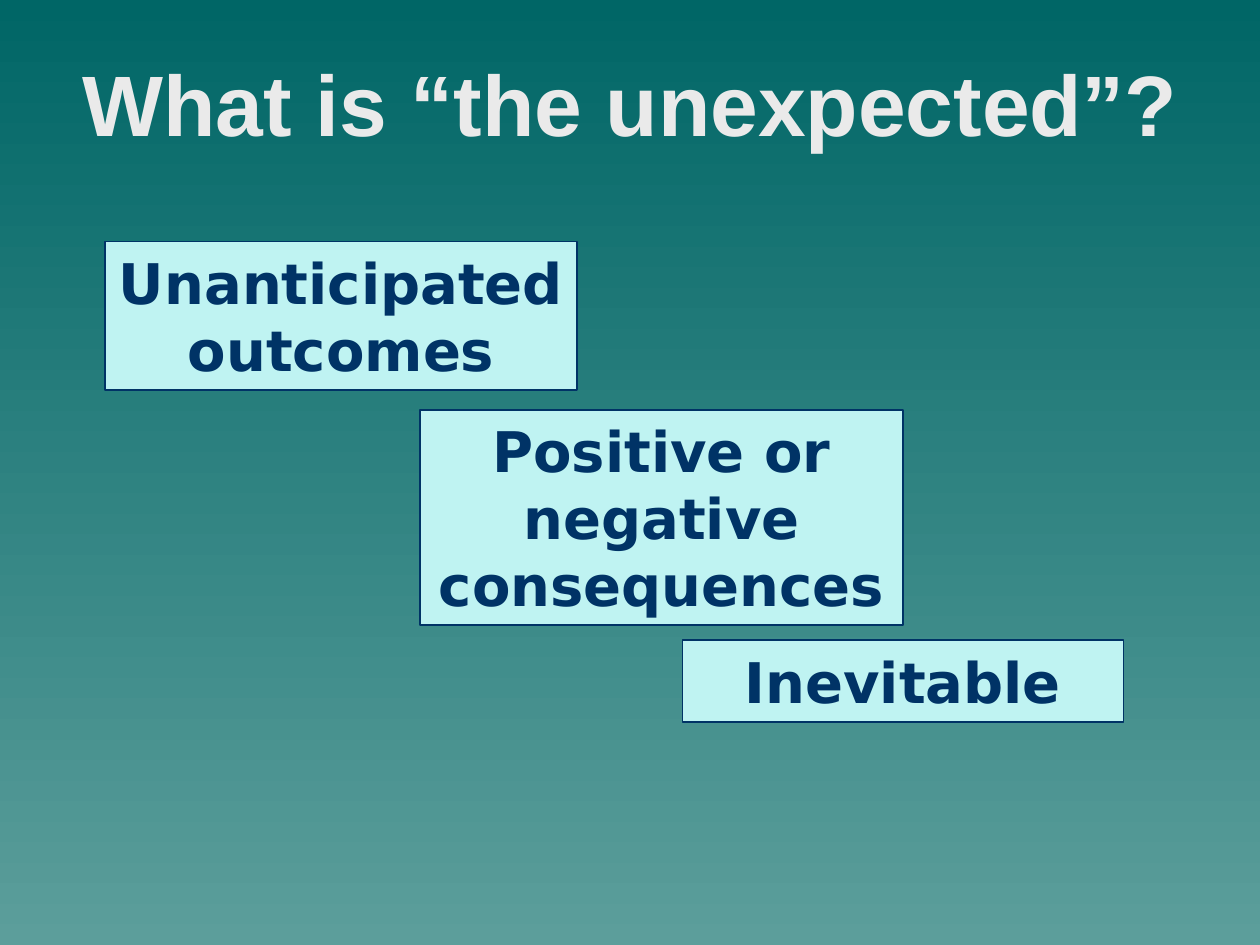
from pptx import Presentation
from pptx.dml.color import RGBColor
from pptx.enum.shapes import MSO_SHAPE
from pptx.enum.text import MSO_ANCHOR, MSO_AUTO_SIZE, PP_ALIGN
from pptx.util import Cm, Pt

TITLE = "What is “the unexpected”?"
BOXES = [
    ("Unanticipated outcomes", 2.12, 4.87, 9.52, 3),
    ("Positive or negative consequences", 8.47, 8.26, 9.74, 4.34),
    ("Inevitable", 13.76, 12.91, 8.89, 1.64),
]
COLORS = {
    "top": "006666",
    "bottom": "5C9E9B",
    "title": "EAEAEA",
    "box": "BFF3F2",
    "ink": "003366",
}


def color(name):
    return RGBColor.from_string(COLORS[name])


def write(shape, text, font_name, size, color_name):
    frame = shape.text_frame
    frame.word_wrap = True
    frame.vertical_anchor = MSO_ANCHOR.MIDDLE
    paragraph = frame.paragraphs[0]
    paragraph.alignment = PP_ALIGN.CENTER
    run = paragraph.add_run()
    run.text = text
    run.font.name = font_name
    run.font.size = Pt(size)
    run.font.bold = True
    run.font.color.rgb = color(color_name)


def add_box(slide, text, left, top, width, height):
    shape = slide.shapes.add_shape(
        MSO_SHAPE.RECTANGLE, Cm(left), Cm(top), Cm(width), Cm(height))
    shape.shadow.inherit = False
    shape.fill.solid()
    shape.fill.fore_color.rgb = color("box")
    shape.line.color.rgb = color("ink")
    shape.line.width = Pt(1)
    write(shape, text, "DejaVu Sans", 32, "ink")
    shape.text_frame.auto_size = MSO_AUTO_SIZE.SHAPE_TO_FIT_TEXT


def main():
    presentation = Presentation()
    presentation.slide_width, presentation.slide_height = Cm(25.4), Cm(19.05)
    slide = presentation.slides.add_slide(presentation.slide_layouts[5])

    fill = slide.background.fill
    fill.gradient()
    fill.gradient_angle = 270
    for stop, name, position in zip(fill.gradient_stops, ("top", "bottom"), (0, 1)):
        stop.color.rgb = color(name)
        stop.position = position

    title = slide.shapes.title
    title.left, title.top, title.width, title.height = (
        Cm(1.27), Cm(0.76), Cm(22.86), Cm(2.62))
    write(title, TITLE, "Arial", 49, "title")
    title.text_frame.auto_size = MSO_AUTO_SIZE.NONE

    for box in BOXES:
        add_box(slide, *box)

    presentation.save("out.pptx")


if __name__ == "__main__":
    main()
